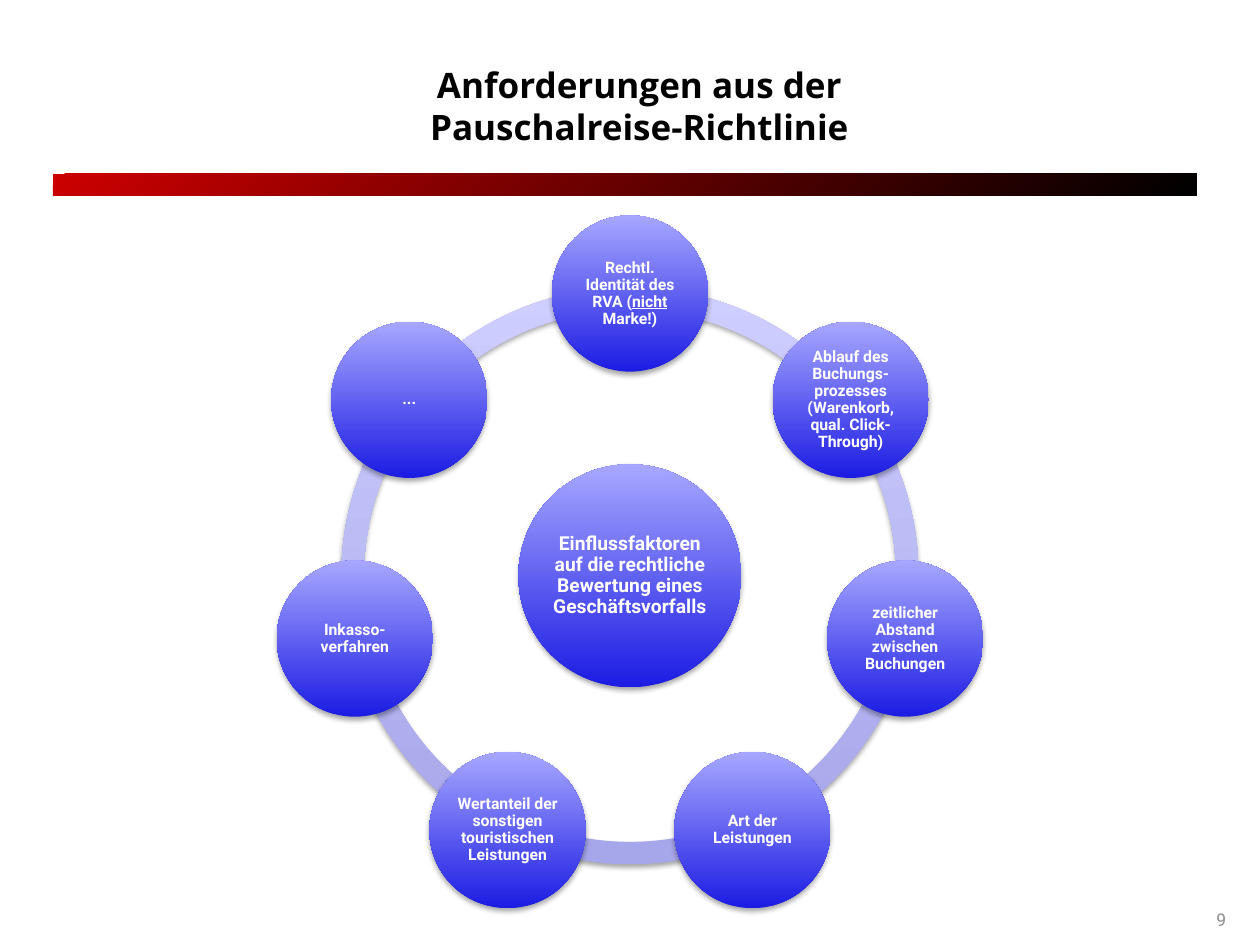
import math
from dataclasses import dataclass

import lxml.etree
import pptx
import pptx.dml.color
import pptx.enum.shapes
import pptx.enum.text
import pptx.oxml.ns
import pptx.util


@dataclass(frozen=True)
class Theme:
    bar: tuple = ("CC0000", "000000")
    ring: tuple = ("A6A6EA", "CECEFF")
    circle: tuple = ("1C1CE3", "A7A7FF")
    title: str = "000000"
    label: str = "FFFFFF"
    number: str = "8C8C8C"
    shadow: str = "000000"
    title_font: str = "Open Sans"
    body_font: str = "Roboto"
    title_size: int = 20
    hub_size: int = 11
    factor_size: int = 9
    number_size: int = 10


theme = Theme()
shapes_enum = pptx.enum.shapes.MSO_SHAPE
align = pptx.enum.text.PP_ALIGN

deck = pptx.Presentation()
deck.slide_width = pptx.util.Inches(10)
deck.slide_height = pptx.util.Inches(7.5)
page = deck.slides.add_slide(deck.slide_layouts[6])

# Square grid: 100 columns by 75 rows
cell = deck.slide_width / 100


def add_shape(kind, left, top, width, height, colours, angle, shadow=True):
    """Add a gradient shape placed in grid cells, with an optional soft shadow."""
    shape = page.shapes.add_shape(
        kind, *(round(cell * value) for value in (left, top, width, height)))
    shape.fill.gradient()
    shape.fill.gradient_angle = angle
    for stop, colour, position in zip(shape.fill.gradient_stops, colours, (0, 1)):
        stop.color.rgb = pptx.dml.color.RGBColor.from_string(colour)
        stop.position = position
    shape.line.fill.background()
    shape.shadow.inherit = False
    if shadow:
        qn = pptx.oxml.ns.qn
        effects = shape.element.spPr.find(qn("a:effectLst"))
        outer = lxml.etree.SubElement(
            effects, qn("a:outerShdw"), blurRad=str(pptx.util.Pt(3.1)),
            dist=str(pptx.util.Pt(1.8)), dir="5400000", rotWithShape="0")
        tint = lxml.etree.SubElement(outer, qn("a:srgbClr"), val=theme.shadow)
        lxml.etree.SubElement(tint, qn("a:alpha"), val="35000")
    return shape


def write(box, parts, font, size, colour, bold=True, alignment=align.CENTER,
          margin=None, spacing=None):
    """Write one paragraph; every second part is underlined."""
    frame = box.text_frame
    frame.word_wrap = True
    frame.vertical_anchor = pptx.enum.text.MSO_ANCHOR.MIDDLE
    if margin is not None:
        frame.margin_left = frame.margin_right = round(cell * margin)
        frame.margin_top = frame.margin_bottom = round(cell * margin)
    para = frame.paragraphs[0]
    para.alignment = alignment
    if spacing:
        para.line_spacing = spacing
    for index, part in enumerate(parts):
        span = para.add_run()
        span.text = part
        span.font.name = font
        span.font.size = pptx.util.Pt(size)
        span.font.bold = bold
        span.font.color.rgb = pptx.dml.color.RGBColor.from_string(colour)
        if index % 2:
            span.font.underline = True


# Header bar, title and page number
add_shape(shapes_enum.RECTANGLE, 4.2, 13.8, 90.8, 1.7, theme.bar, 315, shadow=False)

title = page.shapes.add_textbox(
    *(round(cell * value) for value in (30.3, 3.8, 40.9, 9.2)))
write(title, ["Anforderungen aus der Pauschalreise-Richtlinie"],
      theme.title_font, theme.title_size, theme.title)

number = page.shapes.add_textbox(
    *(round(cell * value) for value in (75, 71, 23.3, 4)))
write(number, ["9"], theme.body_font, theme.number_size, theme.number,
      bold=False, alignment=align.RIGHT)

# Factors clockwise from the top
factors = [
    ["Rechtl. Identität des RVA (", "nicht", " Marke!)"],
    ["Ablauf des Buchungs-prozesses (Warenkorb, qual. Click-Through)"],
    ["zeitlicher Abstand zwischen Buchungen"],
    ["Art der Leistungen"],
    ["Wertanteil der sonstigen touristischen Leistungen"],
    ["Inkasso-verfahren"],
    ["..."],
]
centre_x, centre_y = 50, 45.7
ring_size, hub_size, factor_size = 45.8, 17.7, 12.4
orbit = 22.4
step = 360 / len(factors)

# Ring: one arc between each pair of neighbours
for index in reversed(range(len(factors))):
    arc = add_shape(shapes_enum.BLOCK_ARC, centre_x - ring_size / 2,
                    centre_y - ring_size / 2, ring_size, ring_size, theme.ring, 90)
    start = (270 + index * step) % 360
    # Arc angles are in 60000ths of a degree, adjustments in 100000ths
    arc.adjustments[0] = start * 0.6
    arc.adjustments[1] = (start + step) % 360 * 0.6
    arc.adjustments[2] = 0.039

# Hub, without margins so that its longest word fits on one line
hub = add_shape(shapes_enum.OVAL, centre_x - hub_size / 2, centre_y - hub_size / 2,
                hub_size, hub_size, theme.circle, 90)
write(hub, ["Einflussfaktoren auf die rechtliche Bewertung eines Geschäftsvorfalls"],
      theme.body_font, theme.hub_size, theme.label, margin=0, spacing=0.9)

# Factor circles around the hub
for index, parts in enumerate(factors):
    angle = math.radians(index * step)
    left = centre_x + orbit * math.sin(angle) - factor_size / 2
    top = centre_y - orbit * math.cos(angle) - factor_size / 2
    circle = add_shape(shapes_enum.OVAL, left, top, factor_size, factor_size,
                       theme.circle, 90)
    write(circle, parts, theme.body_font, theme.factor_size, theme.label,
          margin=0.1, spacing=0.9)

deck.save("out.pptx")
